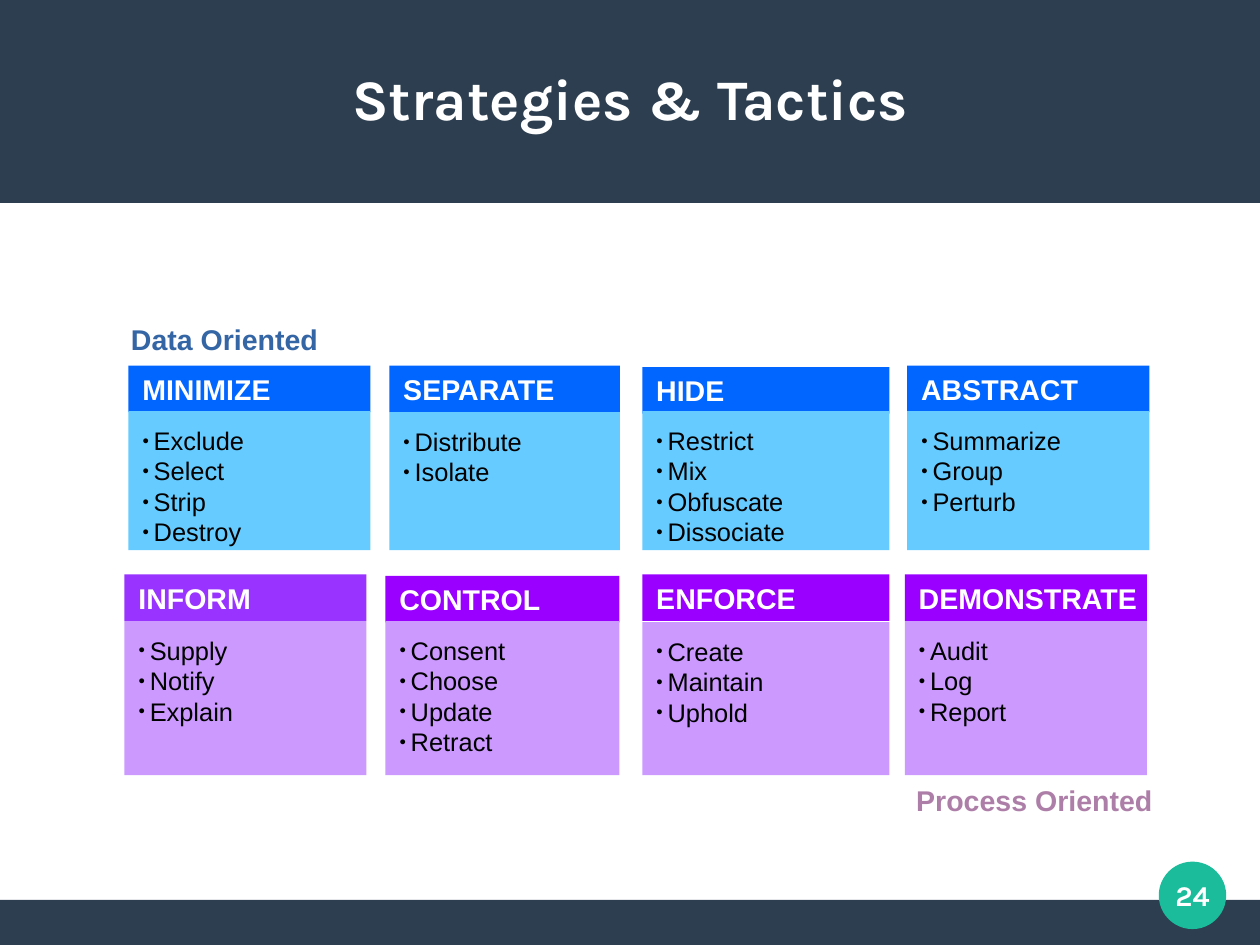
from dataclasses import dataclass

from lxml.etree import SubElement
from pptx import Presentation
from pptx.dml.color import RGBColor
from pptx.enum.shapes import MSO_SHAPE as Preset
from pptx.enum.text import MSO_ANCHOR as Anchor, MSO_AUTO_SIZE as AutoSize, PP_ALIGN as Align
from pptx.oxml.ns import qn
from pptx.util import Cm, Pt

NAVY, TEAL, WHITE, BLACK = "2C3E50", "1ABC9C", "FFFFFF", "000000"
HEAD_HEIGHT = 0.94
BULLET_INDENT = 0.23


@dataclass(frozen=True)
class Row:
    head_top: float
    body_top: float
    bottom: float
    body_color: str


@dataclass(frozen=True)
class Card:
    row: Row
    left: float
    width: float
    head_color: str
    heading: str
    tactics: tuple[str, ...]
    head_drop: float = 0
    body_drop: float = 0


@dataclass(frozen=True)
class Caption:
    left: float
    top: float
    width: float
    text: str
    color: str


DATA = Row(7.37, 8.29, 11.09, "66CCFF")
PROCESS = Row(11.58, 12.52, 15.63, "CC99FF")
CARDS = (
    Card(DATA, 2.59, 4.88, "0066FF", "MINIMIZE", ("Exclude", "Select", "Strip", "Destroy")),
    Card(DATA, 7.85, 4.65, "0066FF", "SEPARATE", ("Distribute", "Isolate"), body_drop=0.02),
    Card(DATA, 12.95, 4.98, "0066FF", "HIDE",
         ("Restrict", "Mix", "Obfuscate", "Dissociate"), head_drop=0.03),
    Card(DATA, 18.29, 4.88, "0066FF", "ABSTRACT", ("Summarize", "Group", "Perturb")),
    Card(PROCESS, 2.51, 4.88, "9933FF", "INFORM", ("Supply", "Notify", "Explain")),
    Card(PROCESS, 7.77, 4.72, "9900FF", "CONTROL",
         ("Consent", "Choose", "Update", "Retract"), head_drop=0.03),
    Card(PROCESS, 12.95, 4.98, "9900FF", "ENFORCE",
         ("Create", "Maintain", "Uphold"), body_drop=0.02),
    Card(PROCESS, 18.24, 4.88, "9900FF", "DEMONSTRATE", ("Audit", "Log", "Report")),
)
CAPTIONS = (
    Caption(2.41, 6.45, 5.21, "Data Oriented", "3465A4"),
    Caption(18.24, 15.75, 5.54, "Process Oriented", "AD7FA8"),
)


def rgb(color: str) -> RGBColor:
    return RGBColor.from_string(color)


def add_block(page, preset, left: float, top: float, width: float, height: float, color: str):
    block = page.shapes.add_shape(preset, Cm(left), Cm(top), Cm(width), Cm(height))
    block.shadow.inherit = False
    block.fill.solid()
    block.fill.fore_color.rgb = rgb(color)
    block.line.fill.background()
    return block


def set_frame(box, anchor, left: float = 0, top: float = 0, right: float = 0, bottom: float = 0):
    frame = box.text_frame
    frame.word_wrap = True
    frame.auto_size = AutoSize.NONE
    frame.vertical_anchor = anchor
    frame.margin_left, frame.margin_top = Cm(left), Cm(top)
    frame.margin_right, frame.margin_bottom = Cm(right), Cm(bottom)
    return frame


def write(para, text: str, size: float, color: str, bold: bool = True,
          font: str = "Arial", align=Align.LEFT) -> None:
    para.alignment = align
    span = para.add_run()
    span.text = text
    span.font.size = Pt(size)
    span.font.name = font
    span.font.bold = bold
    span.font.color.rgb = rgb(color)


def add_bullet(para) -> None:
    props = para._p.get_or_add_pPr()
    props.set("marL", str(Cm(BULLET_INDENT)))
    props.set("indent", str(-Cm(BULLET_INDENT)))
    SubElement(SubElement(props, qn("a:buClr")), qn("a:srgbClr"), val=BLACK)
    SubElement(props, qn("a:buSzPct"), val="45000")
    SubElement(props, qn("a:buFont"), typeface="Arial")
    SubElement(props, qn("a:buChar"), char="●")


def draw_card(page, card: Card) -> None:
    row = card.row
    head = add_block(page, Preset.RECTANGLE, card.left, row.head_top + card.head_drop,
                     card.width, HEAD_HEIGHT, card.head_color)
    write(set_frame(head, Anchor.MIDDLE, left=0.28).paragraphs[0], card.heading, 16.3, WHITE)

    body_top = row.body_top + card.body_drop
    body = add_block(page, Preset.RECTANGLE, card.left, body_top,
                     card.width, row.bottom - body_top, row.body_color)
    frame = set_frame(body, Anchor.TOP, left=0.28, top=0.28, right=0.28)
    for index, tactic in enumerate(card.tactics):
        para = frame.add_paragraph() if index else frame.paragraphs[0]
        write(para, tactic, 14.5, BLACK, bold=False)
        add_bullet(para)


def draw_caption(page, caption: Caption) -> None:
    box = page.shapes.add_textbox(Cm(caption.left), Cm(caption.top), Cm(caption.width), Cm(0.91))
    para = set_frame(box, Anchor.TOP, 0.23, 0.1, 0.23, 0.1).paragraphs[0]
    para.line_spacing = 0.93
    write(para, caption.text, 16.3, caption.color)


def draw_title(page, text: str) -> None:
    band = add_block(page, Preset.RECTANGLE, 0, 0, 25.4, 4.09, NAVY)
    title = page.shapes.title
    title.element.addprevious(band.element)
    title.left, title.top, title.width, title.height = Cm(0.91), Cm(0.76), Cm(23.6), Cm(2.41)
    para = set_frame(title, Anchor.MIDDLE).paragraphs[0]
    write(para, text, 32.7, WHITE, font="Karla", align=Align.CENTER)


def draw_footer(page, number: str) -> None:
    add_block(page, Preset.RECTANGLE, 0, 18.14, 25.4, 0.91, NAVY)
    badge = add_block(page, Preset.OVAL, 23.36, 17.37, 1.36, 1.36, TEAL)
    para = set_frame(badge, Anchor.MIDDLE).paragraphs[0]
    write(para, number, 16.3, WHITE, font="Karla", align=Align.CENTER)


def main() -> None:
    deck = Presentation()
    deck.slide_width, deck.slide_height = Cm(25.4), Cm(19.05)
    page = deck.slides.add_slide(deck.slide_layouts[5])
    draw_title(page, "Strategies & Tactics")
    draw_footer(page, "24")
    for card in CARDS:
        draw_card(page, card)
    for caption in CAPTIONS:
        draw_caption(page, caption)
    deck.save("out.pptx")


if __name__ == "__main__":
    main()
